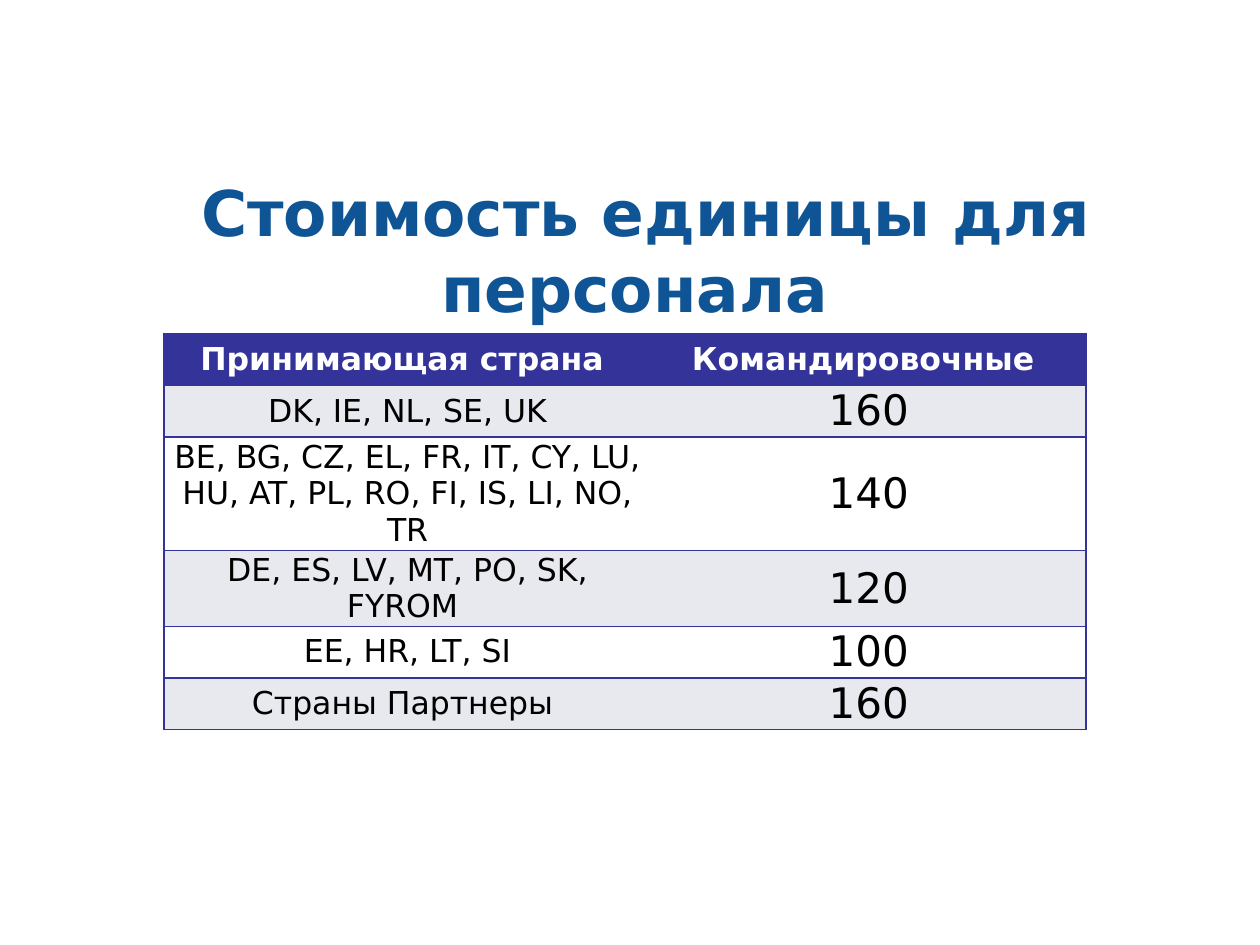
"""Build a slide with a title and a table of unit costs for staff."""
from lxml import etree
from pptx import Presentation
from pptx.dml.color import RGBColor
from pptx.enum import text
from pptx.oxml import ns
from pptx import util as u

FONT = "DejaVu Sans"
COLORS = {"title": "0F5494", "accent": "333399", "band": "E8E8EF",
          "white": "FFFFFF", "black": "000000"}
WIDTH, HEIGHT = u.Inches(10), u.Inches(7.5)
COLUMNS = (0.387, 0.345)
ROW_HEIGHT = u.Inches(0.41)
ROWS = [
    ("Принимающая страна ", "Командировочные "),
    ("DK, IE, NL, SE, UK", "160"),
    ("BE, BG, CZ, EL, FR, IT, CY, LU, HU, AT, PL, RO, FI, IS, LI, NO, TR", "140"),
    ("DE, ES, LV, MT, PO, SK, FYROM ", "120"),
    ("EE, HR, LT, SI", "100"),
    ("Страны Партнеры ", "160"),
]


def rgb(name):
    """Return the named colour."""
    return RGBColor.from_string(COLORS[name])


def write(frame, words, size, color, bold=False):
    """Put centred, formatted words into a text frame."""
    frame.text = words
    para = frame.paragraphs[0]
    para.alignment = text.PP_ALIGN.CENTER
    for span in para.runs:
        span.font.name, span.font.size = FONT, u.Pt(size)
        span.font.bold = bold
        span.font.color.rgb = rgb(color)


def set_borders(cell, sides):
    """Draw the given sides of a cell and hide the others."""
    properties = cell._tc.get_or_add_tcPr()
    for index, side in enumerate("LRTB"):
        line = etree.Element(ns.qn(f"a:ln{side}"), w=str(u.Pt(1)))
        if side in sides:
            fill = etree.SubElement(line, ns.qn("a:solidFill"))
            etree.SubElement(fill, ns.qn("a:srgbClr"), val=COLORS["accent"])
        else:
            etree.SubElement(line, ns.qn("a:noFill"))
        properties.insert(index, line)


def add_title(page, words):
    """Add the indented slide title."""
    box = page.shapes.add_textbox(int(WIDTH * 0.043), int(HEIGHT * 0.196),
                                  int(WIDTH * 0.9), int(HEIGHT * 0.136))
    frame = box.text_frame
    frame.word_wrap = True
    frame.vertical_anchor = text.MSO_ANCHOR.MIDDLE
    write(frame, words, 36, "title", True)
    frame.paragraphs[0]._p.get_or_add_pPr().set("marL", str(u.Inches(0.39)))


def style_cell(cell, words, row, column):
    """Fill, border and write one table cell."""
    header = row == 0
    cell.fill.solid()
    cell.fill.fore_color.rgb = rgb("accent" if header else "band" if row % 2 else "white")
    cell.vertical_anchor = text.MSO_ANCHOR.MIDDLE
    cell.margin_left = cell.margin_right = u.Inches(0.07)
    cell.margin_top = cell.margin_bottom = 0
    size = 24 if column and not header else 18
    write(cell.text_frame, words, size, "white" if header else "black", header)
    set_borders(cell, "RTB" if column else "LTB")


def add_cost_table(page):
    """Add the table of countries and daily allowances."""
    table = page.shapes.add_table(
        len(ROWS), len(COLUMNS), int(WIDTH * 0.13), u.Inches(2.65),
        int(WIDTH * sum(COLUMNS)), ROW_HEIGHT * len(ROWS)).table
    table.first_row = table.horz_banding = False
    for column, share in zip(table.columns, COLUMNS):
        column.width = int(WIDTH * share)
    for row, values in enumerate(ROWS):
        table.rows[row].height = ROW_HEIGHT
        for column, words in enumerate(values):
            style_cell(table.cell(row, column), words, row, column)


def main():
    """Build and save the deck."""
    deck = Presentation()
    deck.slide_width, deck.slide_height = WIDTH, HEIGHT
    page = deck.slides.add_slide(deck.slide_layouts[6])
    add_title(page, "Стоимость единицы для персонала ")
    add_cost_table(page)
    deck.save("out.pptx")


if __name__ == "__main__":
    main()
